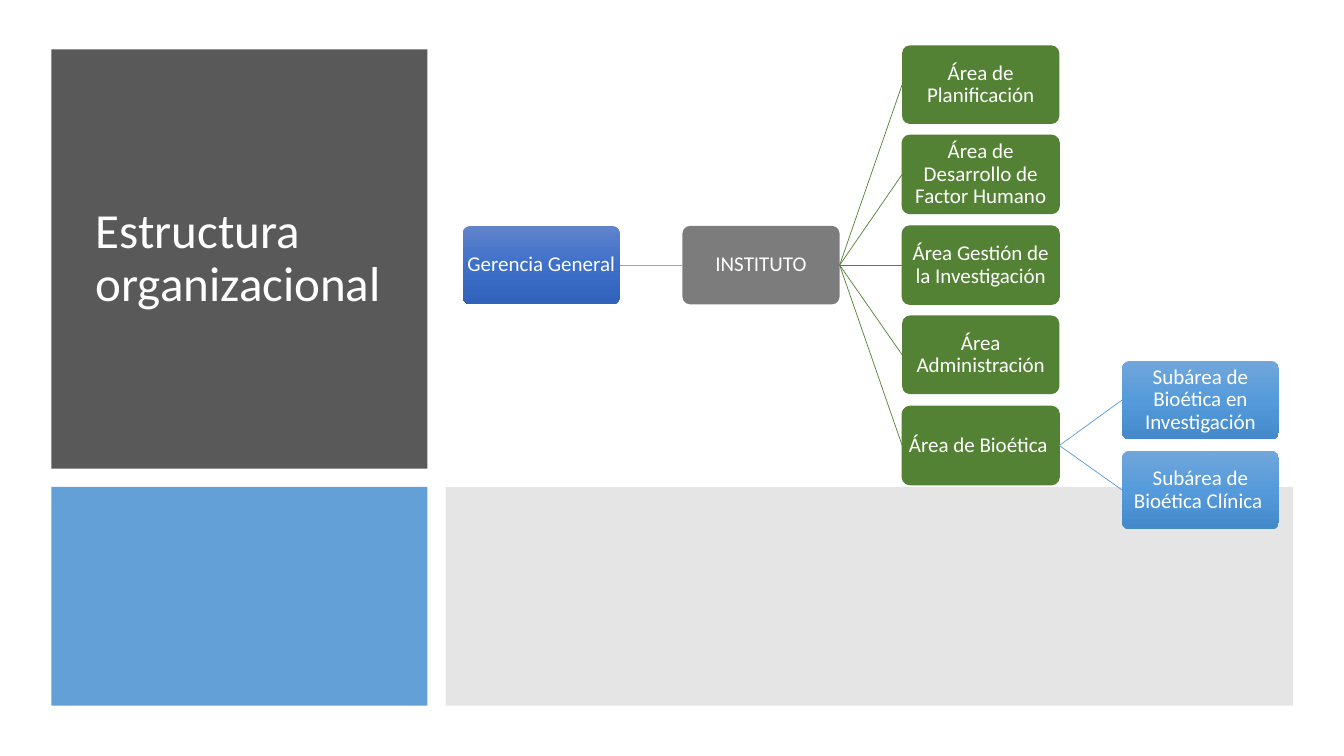
from copy import deepcopy
from dataclasses import dataclass

from lxml.etree import SubElement
from pptx import Presentation
from pptx.dml.color import RGBColor
from pptx.enum.shapes import MSO_CONNECTOR, MSO_SHAPE
from pptx.enum.text import MSO_ANCHOR, PP_ALIGN
from pptx.oxml.ns import qn
from pptx.util import Pt

PX = 9144  # 100 px to the inch
BOX_W, BOX_H = 156, 78
COL_X, COL_STEP = 459, 218
ROW_Y, TWO_ROWS = 45, 179
LEFT_SITE, RIGHT_SITE = 1, 3


@dataclass(frozen=True)
class Theme:
    font: str = "Calibri"
    title_size: int = 35
    box_size: int = 15
    text: str = "FFFFFF"
    dark: str = "595959"
    sky: str = "5B9BD5"
    gray: str = "808080"
    link_gray: str = "A5A5A5"
    center: str = "7C7C7C"
    green: str = "548235"
    blue_grad: tuple = ("6183CB", "3E70CA", "3062BB")
    sky_grad: tuple = ("71A6DB", "559BDB", "448ACA")


T = Theme()

# (name, outlined)
AREAS = [
    ("Área de Planificación", False),
    ("Área de Desarrollo de Factor Humano", True),
    ("Área Gestión de la Investigación", True),
    ("Área Administración", False),
    ("Área de Bioética ", True),
]
SUBAREAS = ["Subárea de Bioética en Investigación", "Subárea de Bioética Clínica "]


def px(*lengths):
    return [n * PX for n in lengths]


def rgb(color):
    return RGBColor.from_string(color)


def set_attrs(obj, values):
    for name, value in values.items():
        setattr(obj, name, value)


def set_gradient(sp, colors):
    """Fill from top to bottom with three evenly spaced colours."""
    fill = sp.fill
    fill.gradient()
    fill.gradient_angle = 270
    stops = sp._element.spPr.find(qn("a:gradFill")).find(qn("a:gsLst"))
    stops.insert(1, deepcopy(stops[0]))
    for i, (stop, color) in enumerate(zip(fill.gradient_stops, colors)):
        stop.color.rgb = rgb(color)
        stop.position = i / 2


def set_fill(sp, color, opacity=100):
    if isinstance(color, tuple):
        set_gradient(sp, color)
        return
    sp.fill.solid()
    sp.fill.fore_color.rgb = rgb(color)
    if opacity < 100:
        clr = next(sp._element.spPr.iter(qn("a:srgbClr")))
        SubElement(clr, qn("a:alpha")).set("val", str(opacity * 1000))


def set_line(line, color, width):
    line.color.rgb = rgb(color)
    line.width = Pt(width)


def write(sp, text, size, align, margins=None):
    tf = sp.text_frame
    set_attrs(tf, {"word_wrap": True, "vertical_anchor": MSO_ANCHOR.MIDDLE, **(margins or {})})
    p = tf.paragraphs[0]
    set_attrs(p, {"alignment": align, "line_spacing": 0.9})
    r = p.add_run()
    r.text = text
    set_attrs(r.font, {"name": T.font, "size": Pt(size)})
    r.font.color.rgb = rgb(T.text)


def add_shape(s, kind, bounds, color, opacity=100):
    sp = s.shapes.add_shape(kind, *px(*bounds))
    sp.shadow.inherit = False
    set_fill(sp, color, opacity)
    sp.line.fill.background()
    return sp


def add_title(s, text, bounds):
    sp = s.shapes.add_textbox(*px(*bounds))
    write(sp, text, T.title_size, PP_ALIGN.LEFT)


def add_box(s, text, col, row, color, outlined=False):
    """Place an organisation box on the grid; row may be a half step."""
    x = COL_X + col * COL_STEP
    y = ROW_Y + int(row * TWO_ROWS / 2)
    sp = add_shape(s, MSO_SHAPE.ROUNDED_RECTANGLE, (x, y, BOX_W, BOX_H), color)
    sp.adjustments[0] = 0.1
    if outlined:
        set_line(sp.line, color, 0.75)
    sides = ("left", "top", "right", "bottom")
    write(sp, text, T.box_size, PP_ALIGN.CENTER, {f"margin_{side}": PX for side in sides})
    return sp


def link(s, parent, child, color):
    cxn = s.shapes.add_connector(MSO_CONNECTOR.STRAIGHT, 0, 0, 0, 0)
    cxn.begin_connect(parent, RIGHT_SITE)
    cxn.end_connect(child, LEFT_SITE)
    set_line(cxn.line, color, 0.5)
    SubElement(cxn._element.spPr, qn("a:effectLst"))


def add_chart_of_areas(s):
    management = add_box(s, "Gerencia General ", 0, 2, T.blue_grad)
    center = add_box(s, "INSTITUTO", 1, 2, T.center)
    link(s, management, center, T.link_gray)
    for row, (name, outlined) in enumerate(AREAS):
        area = add_box(s, name, 2, row, T.green, outlined)
        link(s, center, area, T.green)
    for i, name in enumerate(SUBAREAS):
        subarea = add_box(s, name, 3, len(AREAS) - 1.5 + i, T.sky_grad)
        link(s, area, subarea, T.sky)


def main():
    prs = Presentation()
    set_attrs(prs, {"slide_width": 12192000, "slide_height": 750 * PX})
    s = prs.slides.add_slide(prs.slide_layouts[6])
    add_shape(s, MSO_SHAPE.RECTANGLE, (51, 49, 373, 416), T.dark)
    add_title(s, "Estructura organizacional", (85, 80, 311, 354))
    add_shape(s, MSO_SHAPE.RECTANGLE, (51, 483, 373, 217), T.sky, 95)
    add_shape(s, MSO_SHAPE.RECTANGLE, (442, 483, 841, 217), T.gray, 20)
    add_chart_of_areas(s)
    prs.save("out.pptx")


if __name__ == "__main__":
    main()
